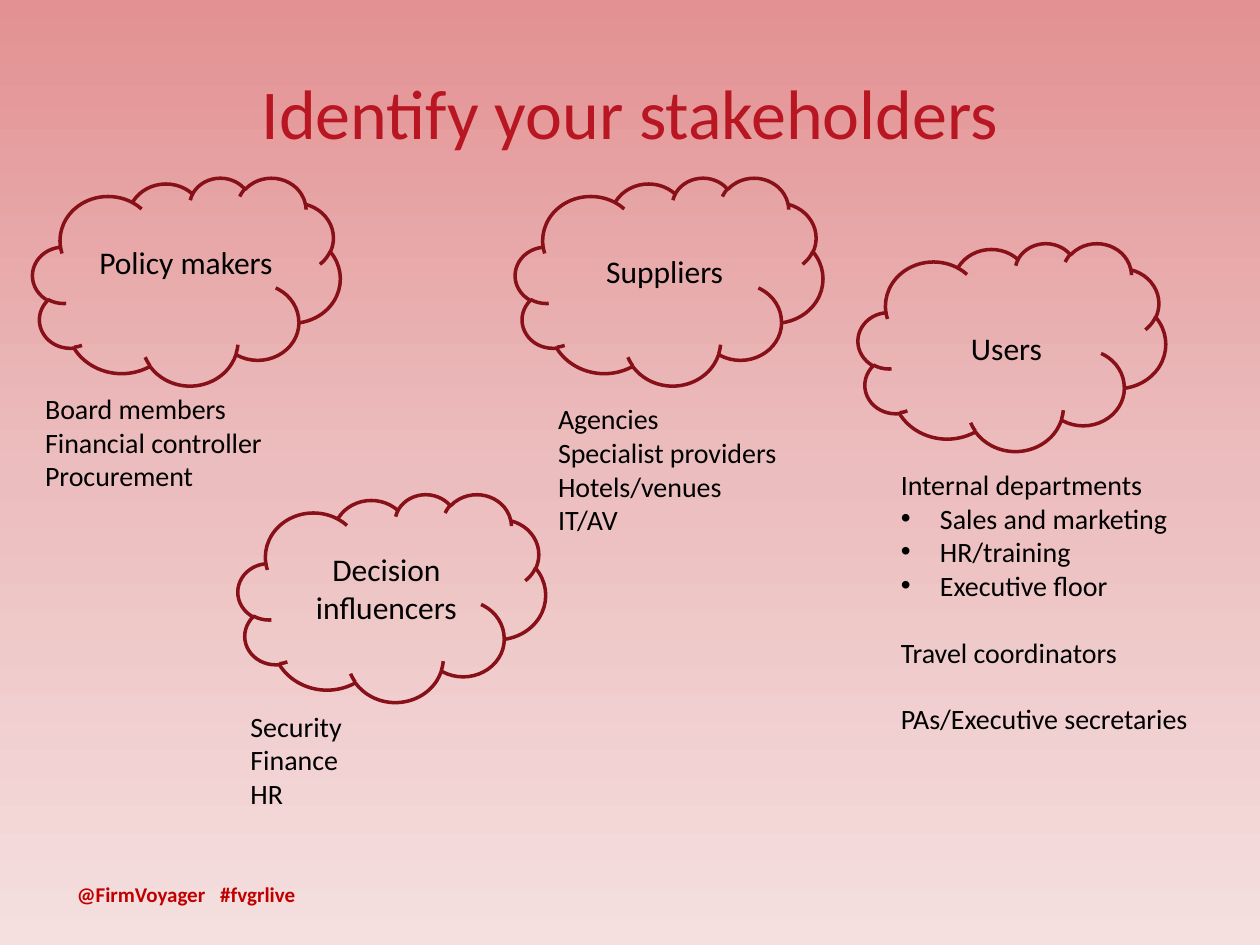
from copy import deepcopy

from lxml import etree
from pptx import Presentation
from pptx.dml.color import RGBColor
from pptx.enum.shapes import MSO_SHAPE
from pptx.enum.text import MSO_ANCHOR, MSO_AUTO_SIZE, PP_ALIGN
from pptx.oxml.ns import qn
from pptx.util import Cm, Pt

CLOUD = MSO_SHAPE.CLOUD
LEFT, CENTER = PP_ALIGN.LEFT, PP_ALIGN.CENTER
TOP, MIDDLE = MSO_ANCHOR.TOP, MSO_ANCHOR.MIDDLE
FIT, FIXED = MSO_AUTO_SIZE.SHAPE_TO_FIT_TEXT, MSO_AUTO_SIZE.NONE

CLOUD_SIZE = (6.2, 4.19)
LABEL_WIDTH = 4.0
BULLET_INDENT = 0.79
GAP = 19  # points, about one line of list text

BACKDROP = [(0, "E39192"), (0.5, "ECBDBE"), (1, "F5DFDF")]
FORMATS = {
    "title": {"size": Pt(40), "color": "B81622"},
    "label": {"size": Pt(18), "color": "000000"},
    "list": {"size": Pt(16), "color": "000000"},
    "footer": {"size": Pt(12), "color": "C00000", "bold": True},
}

# cloud (left, top), label (left, top, height, text),
# list box (left, top, width, height), list lines (text, kind)
STAKEHOLDERS = [
    ((0.66, 3.58), (1.75, 4.78, 1.8, "Policy makers"), (0.66, 7.77, 6.2, 2.31),
     [("Board members", ""), ("Financial controller", ""), ("Procurement", "")]),
    ((4.8, 9.96), (5.79, 10.97, 1.8, "Decision influencers"), (4.8, 14.17, 6.2, 2.31),
     [("Security", ""), ("Finance", ""), ("HR", "")]),
    ((10.39, 3.58), (11.4, 4.95, 1.02, "Suppliers"), (11.0, 7.98, 6.2, 3.0),
     [("Agencies", ""), ("Specialist providers", ""), ("Hotels/venues", ""), ("IT/AV", "")]),
    ((17.3, 4.9), (18.29, 6.5, 1.02, "Users"), (17.91, 9.3, 7.4, 5.89),
     [("Internal departments", ""), ("Sales and marketing", "bullet"),
      ("HR/training", "bullet"), ("Executive floor", "bullet"),
      ("Travel coordinators", "spaced"), ("PAs/Executive secretaries", "spaced")]),
]


def rgb(value):
    return RGBColor.from_string(value)


class SlideBuilder:
    """Holds the style and the slide being filled."""

    font = "Calibri"
    outline = "881019"

    def __init__(self, page):
        self.page = page

    def background(self, colours):
        fill = self.page.background.fill
        fill.gradient()
        fill.gradient_angle = 270
        stop_list = self.page.element.find(".//" + qn("a:gsLst"))
        while len(stop_list) < len(colours):
            stop_list.append(deepcopy(stop_list[0]))
        for stop, (position, colour) in zip(fill.gradient_stops, colours):
            stop.position = position
            stop.color.rgb = rgb(colour)

    def cloud(self, shapes, left, top):
        shape = shapes.add_shape(CLOUD, Cm(left), Cm(top), *map(Cm, CLOUD_SIZE))
        shape.shadow.inherit = False
        shape.fill.background()
        shape.line.color.rgb = rgb(self.outline)
        shape.line.width = Pt(2)

    def text(self, shapes, area, lines, style, align=LEFT, anchor=TOP, fit=FIT):
        box = shapes.add_textbox(*map(Cm, area))
        frame = box.text_frame
        for name, value in {"word_wrap": True, "auto_size": fit,
                            "vertical_anchor": anchor}.items():
            setattr(frame, name, value)
        for number, (line, kind) in enumerate(lines):
            para = frame.add_paragraph() if number else frame.paragraphs[0]
            para.alignment = align
            if kind == "spaced":
                para.space_before = Pt(GAP)
            elif kind == "bullet":
                self.bullet(para)
            elif kind == "tabbed":
                self.tab_stop(para, 2.89)
            span = para.add_run()
            span.text = line
            self.format(span.font, style)

    def format(self, font, style):
        font.name = self.font
        for name, value in FORMATS[style].items():
            if name == "color":
                font.color.rgb = rgb(value)
            else:
                setattr(font, name, value)

    def bullet(self, para):
        props = para._p.get_or_add_pPr()
        props.set("marL", str(Cm(BULLET_INDENT)))
        props.set("indent", str(-Cm(BULLET_INDENT)))
        etree.SubElement(props, qn("a:buFont"), typeface="Arial")
        etree.SubElement(props, qn("a:buChar"), char="•")

    def tab_stop(self, para, position):
        tabs = etree.SubElement(para._p.get_or_add_pPr(), qn("a:tabLst"))
        etree.SubElement(tabs, qn("a:tab"), pos=str(Cm(position)), algn="l")

    def stakeholder(self, cloud, label, list_area, lines):
        shapes = self.page.shapes.add_group_shape().shapes
        left, top, height, name = label
        self.cloud(shapes, *cloud)
        self.text(shapes, (left, top, LABEL_WIDTH, height), [(name, "")], "label", CENTER)
        self.text(shapes, list_area, lines, "list")


def main():
    deck = Presentation()
    deck.slide_width, deck.slide_height = Cm(25.4), Cm(19.05)
    page = deck.slides.add_slide(deck.slide_layouts[6])
    builder = SlideBuilder(page)
    builder.background(BACKDROP)
    builder.text(page.shapes, (1.3, 17.65, 5.28, 0.76),
                 [("@FirmVoyager\t#fvgrlive", "tabbed")], "footer")
    builder.text(page.shapes, (1.27, 1.17, 22.86, 2.16),
                 [("Identify your stakeholders", "")], "title", CENTER, MIDDLE, FIXED)
    for stakeholder in STAKEHOLDERS:
        builder.stakeholder(*stakeholder)
    deck.save("out.pptx")


if __name__ == "__main__":
    main()
